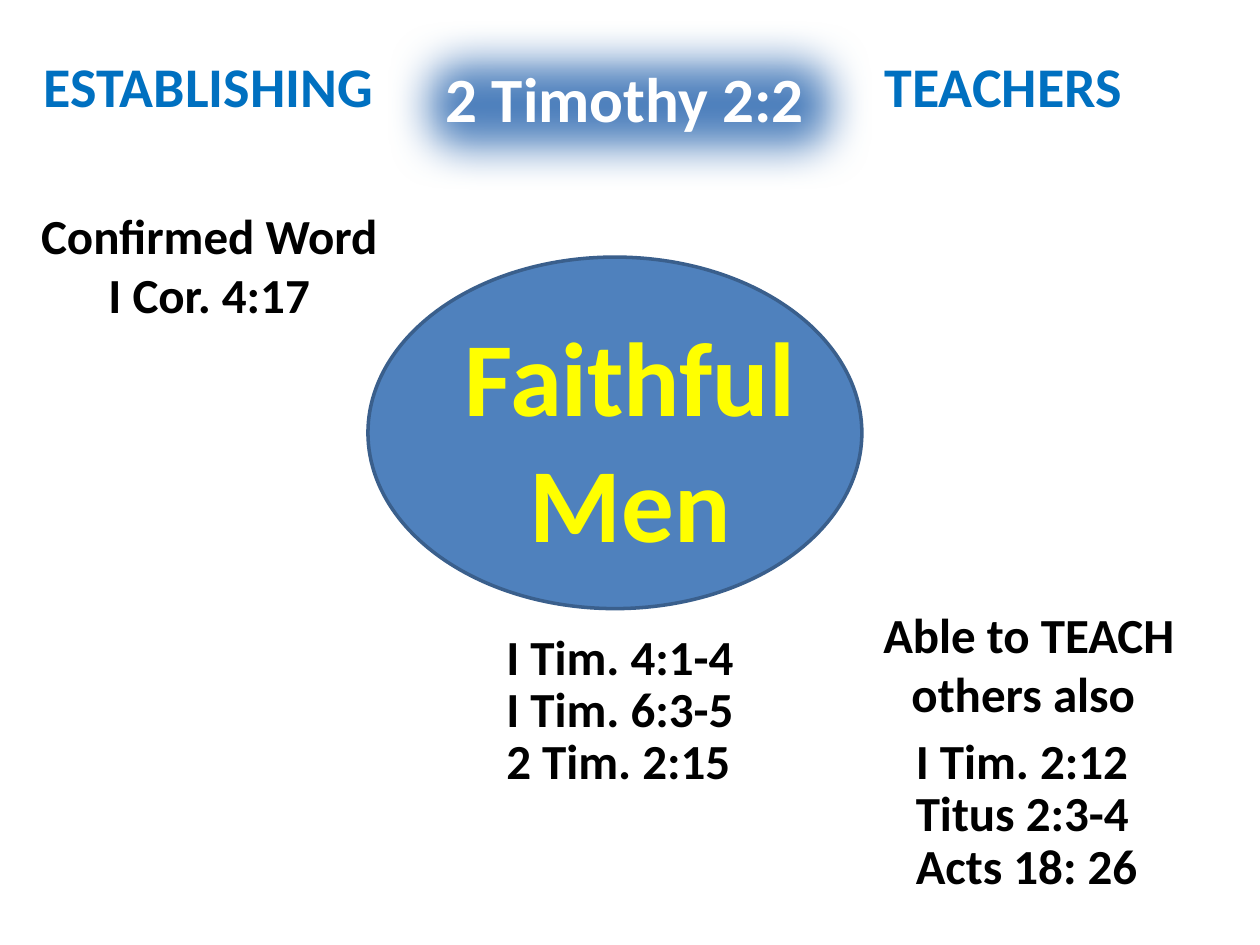
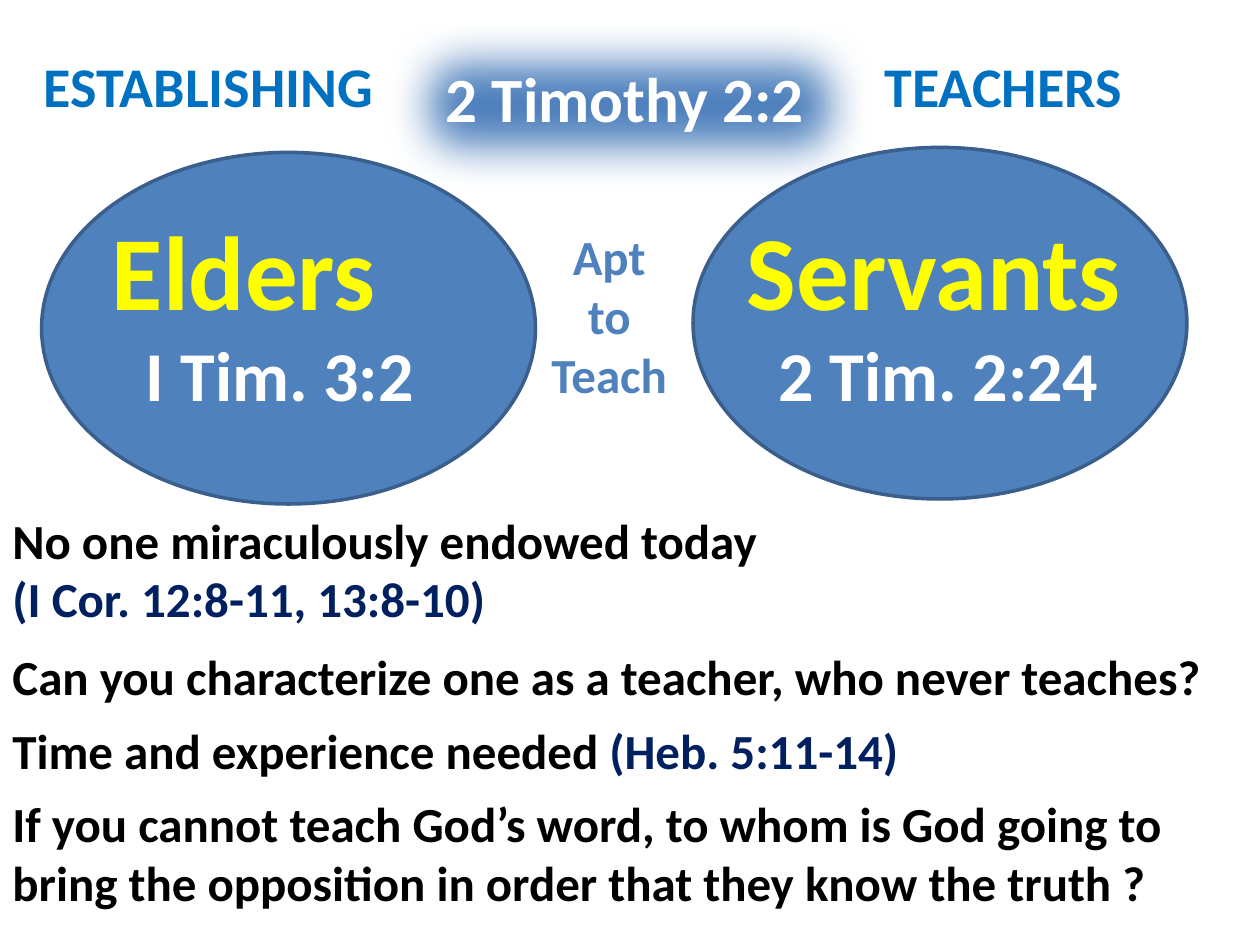
import pptx
import pptx.util
import pptx.dml.color
import pptx.enum.shapes
import pptx.enum.text
import pptx.oxml.ns
from lxml import etree

Inches = pptx.util.Inches
Pt = pptx.util.Pt
SHAPES = pptx.enum.shapes.MSO_SHAPE
ALIGN = pptx.enum.text.PP_ALIGN

BLUE, OUTLINE, HEADING = "4F81BD", "3A5F8C", "0070C0"
YELLOW, WHITE, BLACK, NAVY = "FFFF00", "FFFFFF", "000000", "002060"


def color(value):
    return pptx.dml.color.RGBColor.from_string(value)


class Lesson:
    font = "Calibri"
    body_size = 28
    oval_size = (3.92, 2.79)

    def __init__(self):
        self.deck = pptx.Presentation()
        self.deck.slide_width = Inches(10)
        self.deck.slide_height = Inches(7.5)
        self.slide = None

    def new_slide(self):
        self.slide = self.deck.slides.add_slide(self.deck.slide_layouts[6])
        self.soft_band(3.08, 0.17, 3.83, 1.33)
        self.text(3.44, 0.42, 3.12, 0.71, "2 Timothy 2:2", 36, WHITE)
        self.text(0.25, 0.36, 3, 0.64, "ESTABLISHING", 32, HEADING)
        self.text(6.92, 0.36, 2.58, 0.64, "TEACHERS", 32, HEADING)

    def shape(self, kind, left, top, width, height):
        shape = self.slide.shapes.add_shape(
            kind, Inches(left), Inches(top), Inches(width), Inches(height))
        shape.shadow.inherit = False
        shape.fill.solid()
        shape.fill.fore_color.rgb = color(BLUE)
        shape.line.color.rgb = color(OUTLINE)
        shape.line.width = Pt(2)
        return shape

    def oval(self, left, top):
        self.shape(SHAPES.OVAL, left, top, *self.oval_size)

    def soft_band(self, left, top, width, height):
        band = self.shape(SHAPES.ROUNDED_RECTANGLE, left, top, width, height)
        qn = pptx.oxml.ns.qn
        effects = band._element.spPr.find(qn("a:effectLst"))
        etree.SubElement(effects, qn("a:softEdge"), rad=str(Pt(25)))

    def text(self, left, top, width, height, *paragraphs_and_style, align=ALIGN.LEFT):
        *paragraphs, size, ink = paragraphs_and_style
        box = self.slide.shapes.add_textbox(
            Inches(left), Inches(top), Inches(width), Inches(height))
        frame = box.text_frame
        frame.word_wrap = True
        for index, runs in enumerate(paragraphs):
            paragraph = frame.add_paragraph() if index else frame.paragraphs[0]
            paragraph.alignment = align
            for words, run_ink in [(runs, ink)] if isinstance(runs, str) else runs:
                run = paragraph.add_run()
                run.text = words
                run.font.name = self.font
                run.font.size = Pt(size)
                run.font.bold = True
                run.font.color.rgb = color(run_ink)

    def body(self, left, top, width, height, *paragraphs, ink=BLACK, align=ALIGN.LEFT):
        self.text(left, top, width, height, *paragraphs, self.body_size, ink, align=align)

    def references(self, left, top, verses):
        for row, verse in enumerate(verses):
            self.body(left, top + row * 0.415, 2.33, 0.57, verse)


def faithful_men(lesson):
    lesson.new_slide()
    lesson.oval(2.92, 2.04)
    lesson.text(3.46, 2.42, 3.08, 2.12, "Faithful Men", 60, YELLOW, align=ALIGN.CENTER)
    lesson.body(0.12, 1.58, 3.08, 1.04, "Confirmed Word", "I Cor. 4:17", align=ALIGN.CENTER)
    lesson.references(3.92, 4.92, ["I Tim. 4:1-4", "I Tim. 6:3-5", "2 Tim. 2:15"])
    lesson.body(6.75, 4.75, 2.83, 1.04, "Able to TEACH", "others also ", align=ALIGN.CENTER)
    lesson.references(7.17, 5.75, ["I Tim. 2:12", "Titus 2:3-4", "Acts 18: 26"])


def apt_to_teach(lesson):
    lesson.new_slide()
    lesson.oval(0.33, 1.21)
    lesson.oval(5.5, 1.17)
    for role, role_left, verse, verse_left in [
        ("Elders", 0.79, "I Tim. 3:2", 1.06),
        ("Servants", 5.83, "2 Tim. 2:24", 6.08),
    ]:
        lesson.text(role_left, 1.58, 3.33, 1.11, role, 60, YELLOW)
        lesson.text(verse_left, 2.58, 2.92, 0.77, verse, 40, WHITE)
    lesson.body(4.25, 1.75, 1.17, 1.51, "Apt", "to", "Teach", ink=BLUE, align=ALIGN.CENTER)
    for top, height, paragraphs in [
        (4, 1.04, ["No one miraculously endowed today",
                   [("(I Cor. 12:8-11, 13:8-10)", NAVY)]]),
        (5.08, 0.57, ["Can you characterize one as a teacher, who never teaches?"]),
        (5.67, 0.57, [[("Time and experience needed ", BLACK), ("(Heb. 5:11-14)", NAVY)]]),
        (6.25, 1.04, ["If you cannot teach God’s word, to whom is God going to "
                      "bring the opposition in order that they know the truth ?"]),
    ]:
        lesson.body(0, top, 9.75, height, *paragraphs)


def main():
    lesson = Lesson()
    faithful_men(lesson)
    apt_to_teach(lesson)
    lesson.deck.save("out.pptx")


if __name__ == "__main__":
    main()
